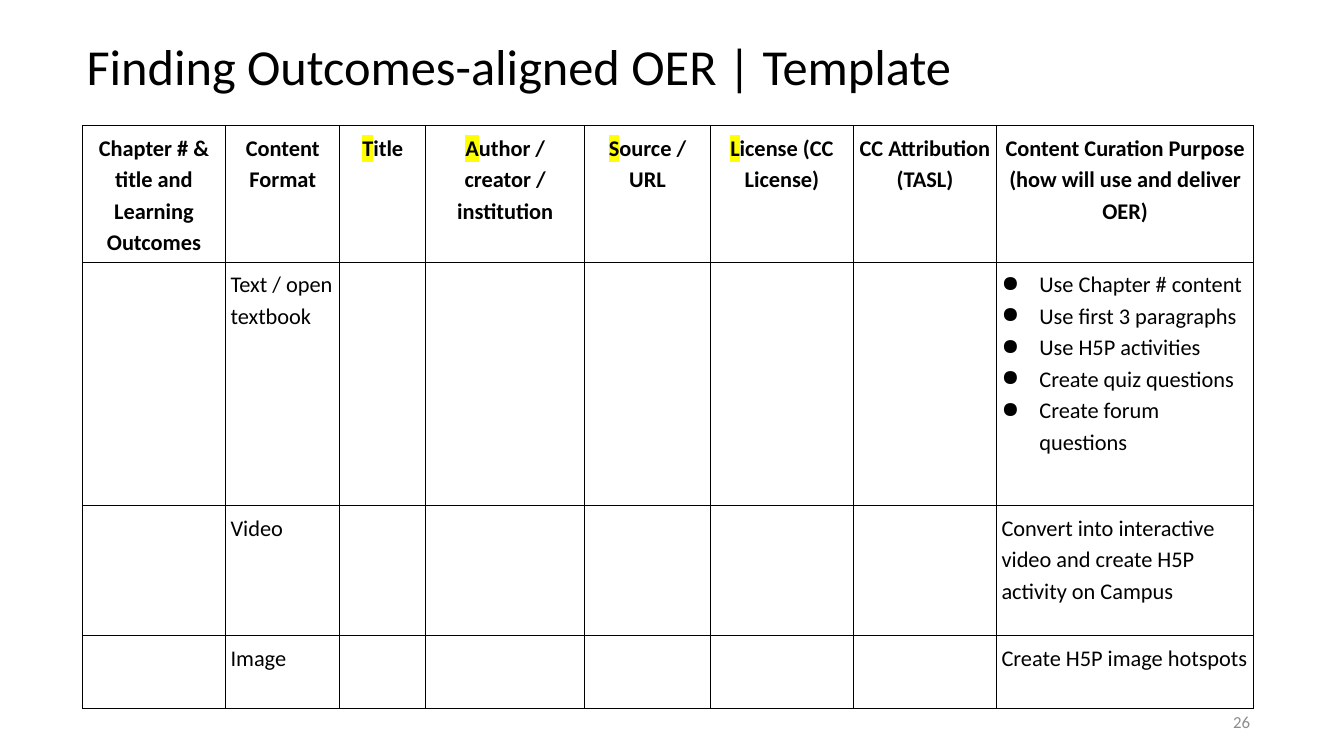
from dataclasses import dataclass

from lxml.etree import SubElement
from pptx import Presentation
from pptx.dml.color import RGBColor
from pptx.enum.text import MSO_ANCHOR, PP_ALIGN
from pptx.oxml import parse_xml
from pptx.oxml.ns import nsdecls, qn
from pptx.util import Pt

TITLE = "Finding Outcomes-aligned OER | Template"
PAGE_NUMBER = "26"

# Each header is a list of paragraphs.
HEADERS = [
    ["Chapter # & title and", "Learning Outcomes"],
    ["Content Format"],
    ["Title"],
    ["Author / creator / institution"],
    ["Source / URL"],
    ["License (CC License)"],
    ["CC Attribution (TASL)"],
    ["Content Curation Purpose (how will use and deliver OER)"],
]
TASL_COLUMNS = range(2, 6)  # initials spelling T-A-S-L are highlighted

# Content format and the purposes it serves; several purposes form a list.
FORMATS = [
    ("Text / open textbook", [
        "Use Chapter # content",
        "Use first 3 paragraphs",
        "Use H5P activities",
        "Create quiz questions",
        "Create forum questions",
    ]),
    ("Video", ["Convert into interactive video and create H5P activity on Campus"]),
    ("Image", ["Create H5P image hotspots"]),
]
FORMAT_COLUMN, PURPOSE_COLUMN = 1, 7

COLUMN_WIDTHS = [102.2, 81.7, 61.3, 113.6, 89.8, 102.2, 102.2, 183.8]
ROW_HEIGHTS = [97.4, 173.9, 92.9, 52]
TABLE_LEFT, TABLE_TOP = 58.9, 89.9
CELL_MARGIN = 3.6
LIST_INDENT = 27


@dataclass(frozen=True)
class Theme:
    font: str = "Calibri"
    ink: str = "000000"
    muted: str = "8C8C8C"
    highlight: str = "FFFF00"
    title_size: float = 36
    table_size: float = 16
    number_size: float = 12
    border: float = 0.75
    table_spacing: float = 1.15


THEME = Theme()


def style_run(run, size, color=THEME.ink, bold=False):
    font = run.font
    font.name, font.size, font.bold = THEME.font, Pt(size), bold
    font.color.rgb = RGBColor.from_string(color)


def highlight(run):
    fill = run.font._element.find(qn("a:solidFill"))
    fill.addnext(parse_xml(
        f'<a:highlight {nsdecls("a")}><a:srgbClr val="{THEME.highlight}"/></a:highlight>'
    ))


def add_label(slide, text, box, size, color):
    shape = slide.shapes.add_textbox(*map(Pt, box))
    frame = shape.text_frame
    frame.word_wrap = True
    frame.text = text
    style_run(frame.paragraphs[0].runs[0], size, color)
    return frame


def add_bullet(paragraph):
    properties = paragraph._p.get_or_add_pPr()
    properties.set("marL", str(Pt(LIST_INDENT)))
    properties.set("indent", str(-Pt(LIST_INDENT)))
    color = SubElement(properties, qn("a:buClr"))
    SubElement(color, qn("a:srgbClr"), val=THEME.ink)
    SubElement(properties, qn("a:buChar"), char="●")


def frame_cell(cell):
    """Give the cell even margins, black borders and no fill."""
    cell.margin_left = cell.margin_right = Pt(CELL_MARGIN)
    cell.margin_top = cell.margin_bottom = Pt(CELL_MARGIN)
    properties = cell._tc.get_or_add_tcPr()
    for side in "LRTB":
        line = SubElement(properties, qn(f"a:ln{side}"), w=str(Pt(THEME.border)))
        fill = SubElement(line, qn("a:solidFill"))
        SubElement(fill, qn("a:srgbClr"), val=THEME.ink)
    cell.fill.background()


def fill_cell(cell, texts, header=False, initial=False):
    """Write one paragraph per text; initial marks the first letter."""
    frame = cell.text_frame
    frame.text = "\n".join(texts)
    for paragraph in frame.paragraphs:
        paragraph.line_spacing = THEME.table_spacing
        paragraph.alignment = PP_ALIGN.CENTER if header else PP_ALIGN.LEFT
        if initial:
            text = paragraph.text
            paragraph.text = text[0]
            paragraph.add_run().text = text[1:]
        elif len(texts) > 1 and not header:
            add_bullet(paragraph)
        for run in paragraph.runs:
            style_run(run, THEME.table_size, bold=header)
        if initial:
            highlight(paragraph.runs[0])


def add_oer_table(slide):
    table = slide.shapes.add_table(
        len(ROW_HEIGHTS), len(COLUMN_WIDTHS), Pt(TABLE_LEFT), Pt(TABLE_TOP),
        Pt(sum(COLUMN_WIDTHS)), Pt(sum(ROW_HEIGHTS)),
    ).table
    table.first_row = table.horz_banding = False
    for column, width in zip(table.columns, COLUMN_WIDTHS):
        column.width = Pt(width)
    for row, height in zip(table.rows, ROW_HEIGHTS):
        row.height = Pt(height)
    for cell in table.iter_cells():
        frame_cell(cell)
    for index, texts in enumerate(HEADERS):
        fill_cell(table.cell(0, index), texts, header=True, initial=index in TASL_COLUMNS)
    for index, (content_format, purposes) in enumerate(FORMATS, start=1):
        fill_cell(table.cell(index, FORMAT_COLUMN), [content_format])
        fill_cell(table.cell(index, PURPOSE_COLUMN), purposes)


def main():
    presentation = Presentation()
    presentation.slide_width, presentation.slide_height = Pt(960), Pt(540)
    slide = presentation.slides.add_slide(presentation.slide_layouts[6])

    title = add_label(slide, TITLE, (54.7, 26.6, 828.7, 62.6), THEME.title_size, THEME.ink)
    title.paragraphs[0].line_spacing = 0.9
    add_oer_table(slide)
    number = add_label(
        slide, PAGE_NUMBER, (678.2, 501.8, 221.8, 27.4), THEME.number_size, THEME.muted
    )
    number.vertical_anchor = MSO_ANCHOR.MIDDLE
    number.paragraphs[0].alignment = PP_ALIGN.RIGHT

    presentation.save("out.pptx")


if __name__ == "__main__":
    main()
